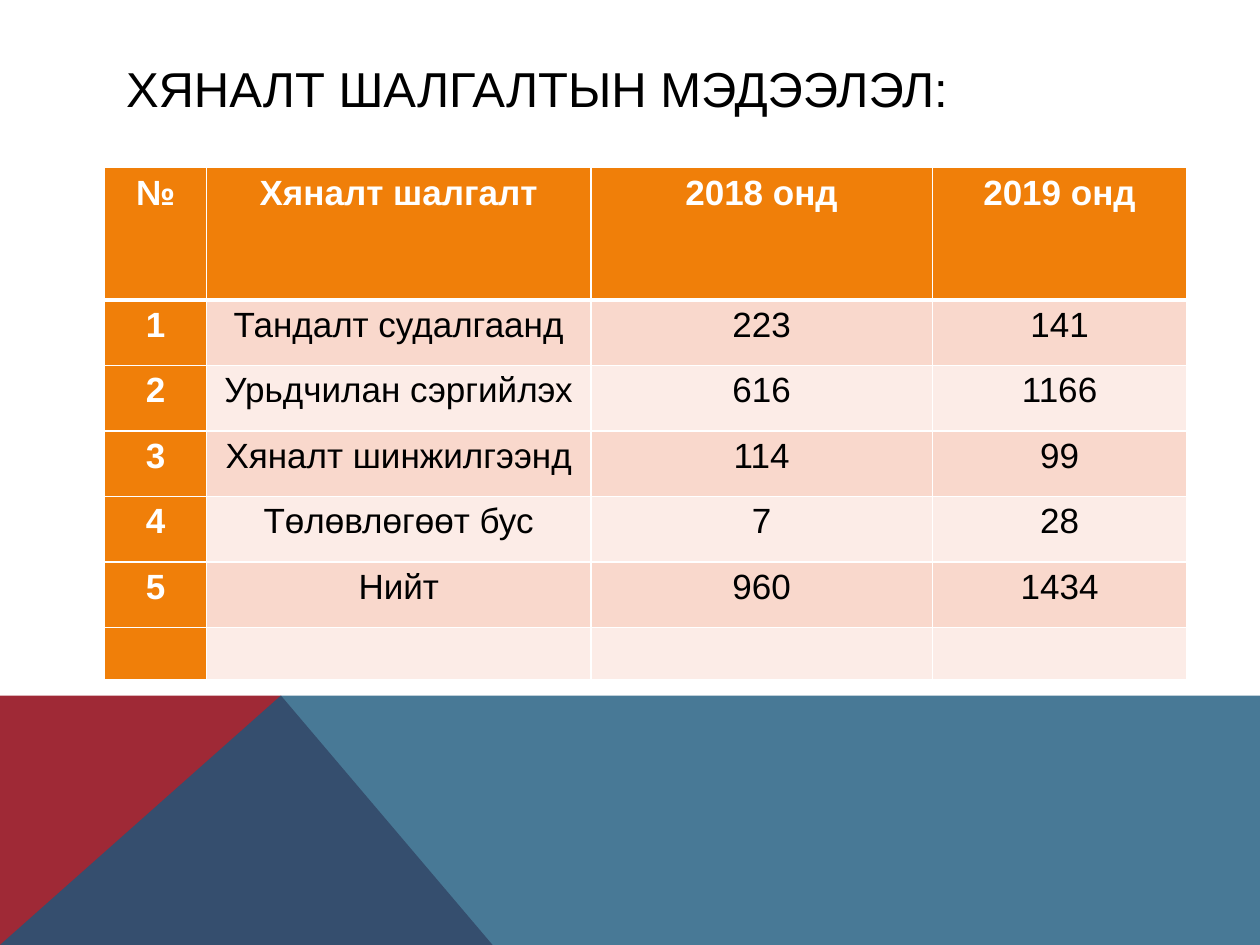
from dataclasses import dataclass
from typing import Optional

from lxml import etree
from pptx import Presentation
from pptx import util as u
from pptx.dml.color import RGBColor
from pptx.enum import text
from pptx.oxml.ns import qn

FONT = "Arial"
WHITE, BLACK, ORANGE = "FFFFFF", "000000", "F07F09"
BANDS = ("F9D8CC", "FCECE7")

COLUMN_WIDTHS = (0.81, 3.05, 2.71, 2.02)
ROW_HEIGHTS = (1.05, *[0.52] * 5, 0.42)
ROWS = (
    ("№", "Хяналт шалгалт", "2018 онд", "2019 онд"),
    ("1", "Тандалт судалгаанд", "223", "141"),
    ("2", "Урьдчилан сэргийлэх", "616", "1166"),
    ("3", "Хяналт шинжилгээнд", "114", "99"),
    ("4", "Төлөвлөгөөт бус", "7", "28"),
    ("5", "Нийт", "960", "1434"),
    ("", "", "", ""),
)


@dataclass
class Panel:
    points: tuple
    color: str
    opacity: Optional[int] = None


PANELS = (
    Panel(((0, 7.5), (0, 5.52), (2.23, 5.52), (3.91, 7.5)), "9F2936"),
    Panel(((0, 7.5), (2.23, 5.52), (10, 5.52), (10, 7.5)), "1B587C", 80),
)


def set_fill(fill, color: str) -> None:
    fill.solid()
    fill.fore_color.rgb = RGBColor.from_string(color)


def add_run(paragraph, content: str, size: int, color: str, bold: bool = False) -> None:
    run = paragraph.add_run()
    run.text = content
    run.font.name = FONT
    run.font.size = u.Pt(size)
    run.font.bold = bold
    run.font.color.rgb = RGBColor.from_string(color)


def draw_panel(slide, panel: Panel) -> None:
    points = [(u.Inches(x), u.Inches(y)) for x, y in panel.points]
    builder = slide.shapes.build_freeform(*points[0], scale=1.0)
    builder.add_line_segments(points[1:], close=True)
    shape = builder.convert_to_shape()
    shape.shadow.inherit = False
    shape.line.fill.background()
    set_fill(shape.fill, panel.color)
    if panel.opacity is not None:
        color = shape.fill._xPr.find(".//" + qn("a:srgbClr"))
        etree.SubElement(color, qn("a:alpha"), val=str(panel.opacity * 1000))


def set_borders(cell, top: int, bottom: int) -> None:
    properties = cell._tc.get_or_add_tcPr()
    for side, width in (("L", 1), ("R", 1), ("T", top), ("B", bottom)):
        line = etree.SubElement(properties, qn(f"a:ln{side}"), w=str(u.Pt(width)))
        solid = etree.SubElement(line, qn("a:solidFill"))
        etree.SubElement(solid, qn("a:srgbClr"), val=WHITE)


def format_cell(cell, row: int, column: int, content: str) -> None:
    heading = row == 0 or column == 0
    cell.margin_left = cell.margin_right = u.Inches(0.07)
    cell.margin_top = cell.margin_bottom = 0
    # The rule under the header row is heavier
    set_borders(cell, top=3 if row == 1 else 1, bottom=3 if row == 0 else 1)
    set_fill(cell.fill, ORANGE if heading else BANDS[(row - 1) % 2])
    if content:
        paragraph = cell.text_frame.paragraphs[0]
        paragraph.alignment = text.PP_ALIGN.CENTER
        paragraph.line_spacing = 1.15
        add_run(paragraph, content, 20, WHITE if heading else BLACK, heading)


def draw_title(slide, content: str) -> None:
    title = slide.shapes.title
    title.left, title.top = u.Inches(0.9), u.Inches(0.4)
    title.width, title.height = u.Inches(8.22), u.Inches(0.6)
    frame = title.text_frame
    frame.word_wrap = True
    frame.vertical_anchor = text.MSO_ANCHOR.MIDDLE
    paragraph = frame.paragraphs[0]
    paragraph.alignment = text.PP_ALIGN.LEFT
    add_run(paragraph, content, 28, BLACK)


def draw_table(slide) -> None:
    table = slide.shapes.add_table(
        len(ROWS), len(COLUMN_WIDTHS), u.Inches(0.83), u.Inches(1.33),
        u.Inches(sum(COLUMN_WIDTHS)), u.Inches(sum(ROW_HEIGHTS)),
    ).table
    table.first_col = True
    for column, width in zip(table.columns, COLUMN_WIDTHS):
        column.width = u.Inches(width)
    for row, height in zip(table.rows, ROW_HEIGHTS):
        row.height = u.Inches(height)
    for row, values in enumerate(ROWS):
        for column, content in enumerate(values):
            format_cell(table.cell(row, column), row, column, content)


def main() -> None:
    presentation = Presentation()
    presentation.slide_width, presentation.slide_height = u.Inches(10), u.Inches(7.5)
    slide = presentation.slides.add_slide(presentation.slide_layouts[5])
    set_fill(slide.background.fill, WHITE)

    # Coloured panels along the bottom
    for panel in PANELS:
        draw_panel(slide, panel)

    # Title and inspection figures
    draw_title(slide, "ХЯНАЛТ ШАЛГАЛТЫН МЭДЭЭЛЭЛ:")
    draw_table(slide)
    presentation.save("out.pptx")


if __name__ == "__main__":
    main()
